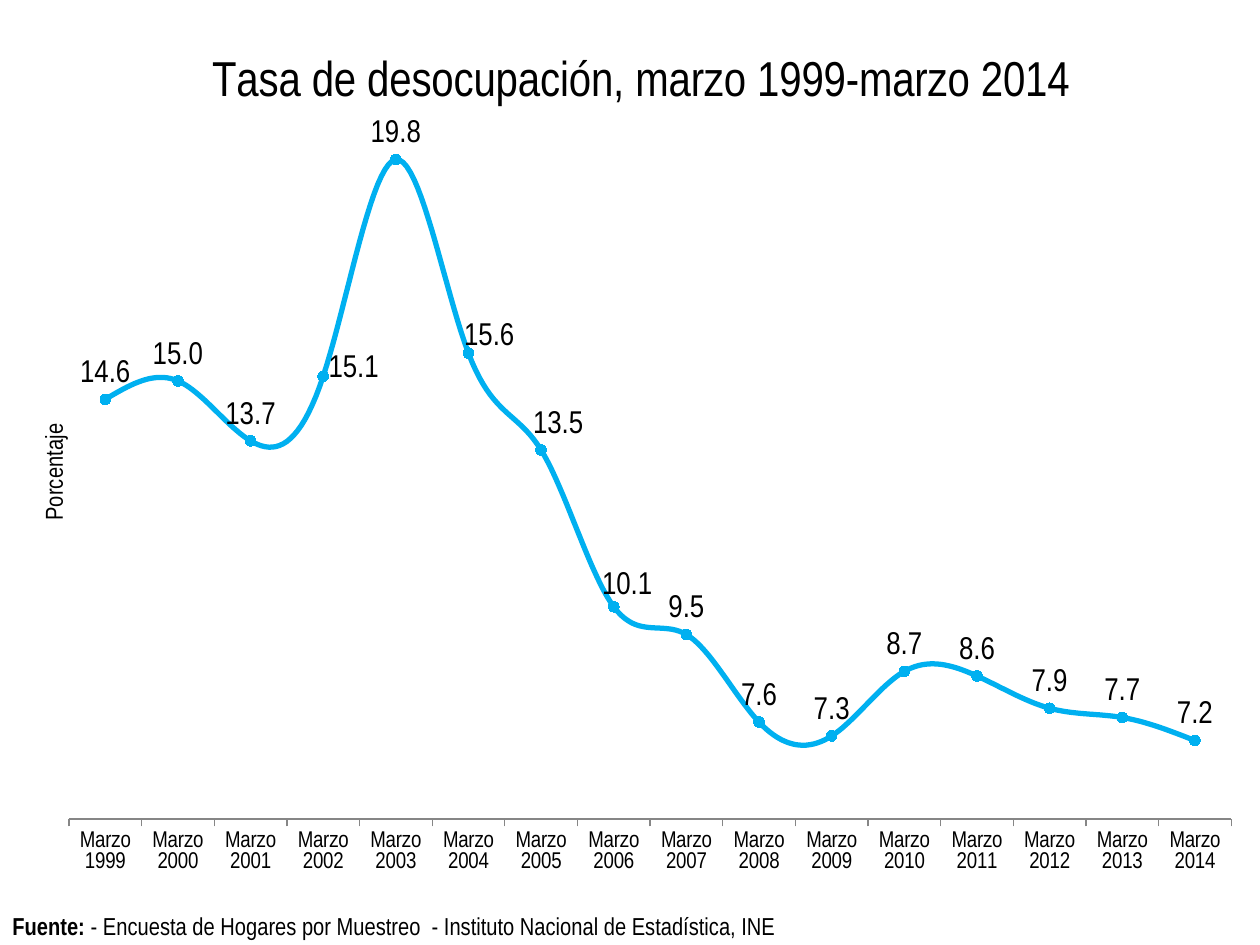
from lxml.etree import SubElement
from pptx import Presentation
from pptx.chart.data import CategoryChartData
from pptx.dml.color import RGBColor
from pptx.enum.chart import (XL_CHART_TYPE, XL_LABEL_POSITION, XL_MARKER_STYLE,
                             XL_TICK_MARK)
from pptx.enum.text import MSO_ANCHOR
from pptx.oxml import parse_xml
from pptx.oxml.ns import nsdecls, qn
from pptx.util import Inches, Pt

COLORS = {"text": "000000", "line": "00B0F0", "axis": "868686"}
RATES = [14.6, 15.0, 13.7, 15.1, 19.8, 15.6, 13.5, 10.1,
         9.5, 7.6, 7.3, 8.7, 8.6, 7.9, 7.7, 7.2]
FIRST_YEAR = 1999
# Label shifts by year, as fractions of the chart's width and height
LABEL_SHIFTS = {2002: (0.025, 0.02), 2004: (0.017, 0.01),
                2005: (0.014, 0), 2006: (0.011, 0.005)}


def color(name):
    return RGBColor.from_string(COLORS[name])


def manual_layout(x, y, from_edge=False):
    """Return a chart layout, measured from the edge or from the usual place."""
    layout = parse_xml(f"<c:layout {nsdecls('c')}><c:manualLayout/></c:layout>")
    values = {"xMode": "edge", "yMode": "edge"} if from_edge else {}
    for tag, value in {**values, "x": x, "y": y}.items():
        SubElement(layout[0], qn(f"c:{tag}")).set("val", str(value))
    return layout


class SlideBuilder:
    font_name = "Arial Narrow"

    def __init__(self, slide):
        self.slide = slide

    def style(self, font, size, bold=False):
        font.name = self.font_name
        font.size = Pt(size)
        font.bold = bold
        font.color.rgb = color("text")

    def chart_heading(self, heading, text, size, x, y):
        frame = heading.text_frame
        frame.text = text
        self.style(frame.paragraphs[0].runs[0].font, size)
        element = heading._element
        for old in element.findall(qn("c:layout")):
            element.remove(old)
        element.find(qn("c:tx")).addnext(manual_layout(x, y, from_edge=True))
        return frame

    def line_chart(self, left, top, width, height):
        data = CategoryChartData(number_format="0.0")
        data.categories = [f"Marzo {FIRST_YEAR + i}" for i in range(len(RATES))]
        data.add_series("Series 1", RATES)
        chart = self.slide.shapes.add_chart(
            XL_CHART_TYPE.LINE_MARKERS, Inches(left), Inches(top),
            Inches(width), Inches(height), data).chart
        chart.has_legend = False
        chart.font.name = "Calibri"
        chart.font.size = Pt(10)
        chart.font.color.rgb = color("text")
        chart.plots[0].vary_by_categories = False
        self.chart_heading(chart.chart_title,
                           "Tasa de desocupación, marzo 1999-marzo 2014",
                           28, 0.15, 0.03)
        self.axes(chart)
        self.series(chart.plots[0].series[0])
        self.plot_area(chart, 0.04, 0.095, 0.952, 0.807)

    def axes(self, chart):
        months = chart.category_axis
        months.major_tick_mark = XL_TICK_MARK.OUTSIDE
        months.has_major_gridlines = False
        months.format.line.color.rgb = color("axis")
        self.style(months.tick_labels.font, 13)

        rates = chart.value_axis
        rates.minimum_scale, rates.maximum_scale = 5.5, 21
        rates.has_major_gridlines = False
        rates.tick_labels.number_format = "0.0"
        rates.tick_labels.number_format_is_linked = False
        frame = self.chart_heading(rates.axis_title, "Porcentaje", 14, 0.014, 0.45)
        body = frame._txBody.find(qn("a:bodyPr"))
        body.set("rot", "-5400000")
        body.set("vert", "horz")
        rates.visible = False

    def series(self, series):
        series.smooth = True
        series.format.line.color.rgb = color("line")
        series.format.line.width = Pt(3)
        marker = series.marker
        marker.style = XL_MARKER_STYLE.CIRCLE
        marker.size = 6
        marker.format.fill.solid()
        marker.format.fill.fore_color.rgb = color("line")
        marker.format.line.color.rgb = color("line")

        labels = series.data_labels
        labels.show_value = True
        labels.number_format = "0.0"
        labels.number_format_is_linked = False
        labels.position = XL_LABEL_POSITION.ABOVE
        self.style(labels.font, 18)
        for year, shift in LABEL_SHIFTS.items():
            label = series.points[year - FIRST_YEAR].data_label
            self.style(label.font, 18)
            label.position = XL_LABEL_POSITION.ABOVE
            element = label._get_or_add_dLbl()
            element.find(qn("c:idx")).addnext(manual_layout(*shift))

    def plot_area(self, chart, x, y, width, height):
        area = chart._chartSpace.chart.plotArea
        for old in area.findall(qn("c:layout")):
            area.remove(old)
        layout = manual_layout(x, y, from_edge=True)
        target = parse_xml(f'<c:layoutTarget {nsdecls("c")} val="inner"/>')
        layout[0].insert(0, target)
        for tag, value in (("w", width), ("h", height)):
            SubElement(layout[0], qn(f"c:{tag}")).set("val", str(value))
        area.insert(0, layout)

    def source_note(self, lead, text, left, top, width, height):
        box = self.slide.shapes.add_textbox(
            Inches(left), Inches(top), Inches(width), Inches(height))
        frame = box.text_frame
        frame.word_wrap = True
        frame.vertical_anchor = MSO_ANCHOR.MIDDLE
        frame.margin_top = frame.margin_bottom = 0
        para = frame.paragraphs[0]
        for words, bold in ((lead, True), (text, False)):
            span = para.add_run()
            span.text = words
            self.style(span.font, 14, bold)


def main():
    deck = Presentation()
    deck.slide_width, deck.slide_height = Inches(10), Inches(7.5)
    builder = SlideBuilder(deck.slides.add_slide(deck.slide_layouts[6]))

    # Unemployment rate chart
    builder.line_chart(0.16, 0.16, 9.69, 7.03)

    # Source of the data
    builder.source_note(
        "Fuente:",
        " - Encuesta de Hogares por Muestreo  - Instituto Nacional de Estadística, INE",
        0, 7.21, 6.33, 0.27)

    deck.save("out.pptx")


if __name__ == "__main__":
    main()
